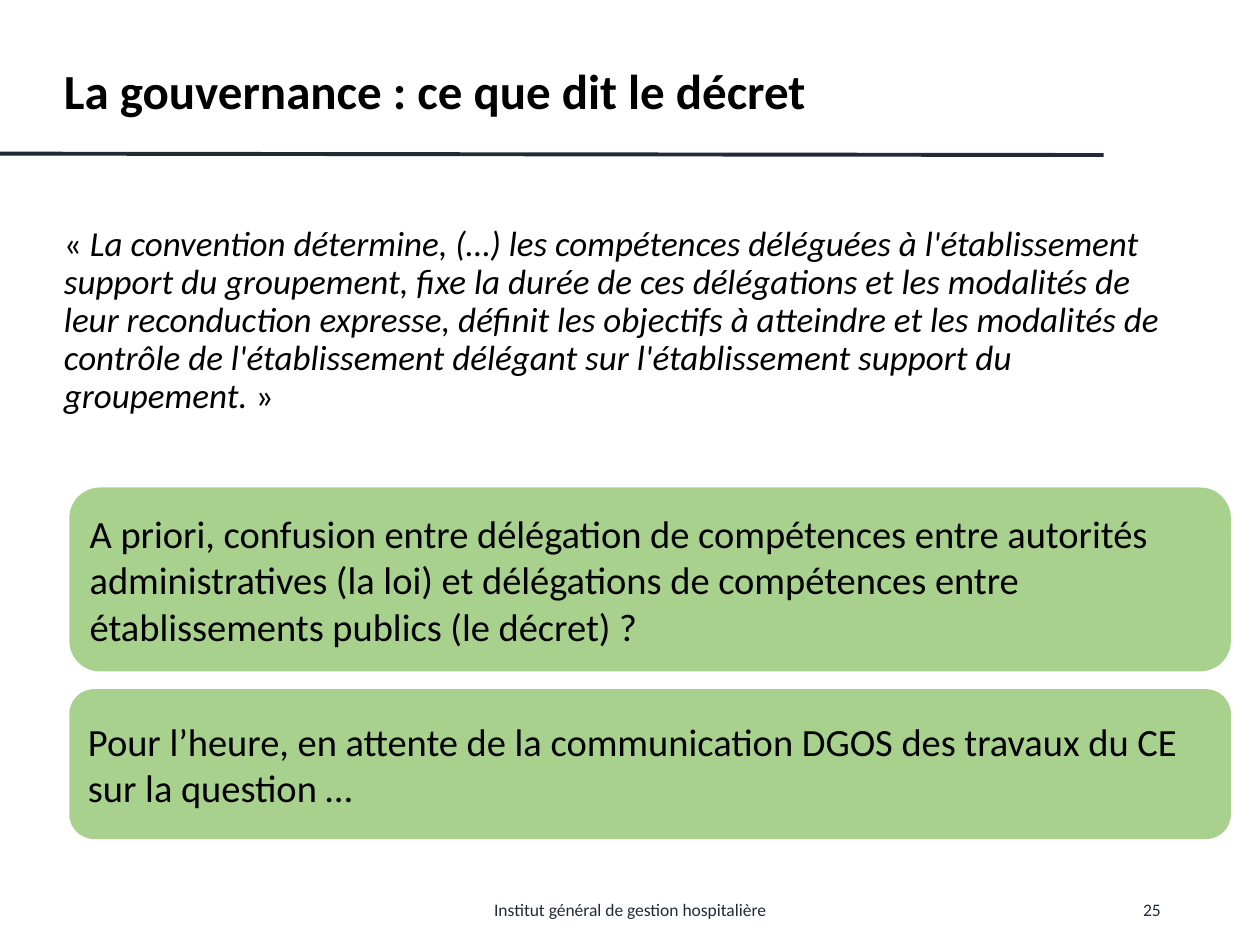
import pptx
import pptx.dml.color
import pptx.enum.shapes
import pptx.enum.text
import pptx.util
from lxml import etree

Pt = pptx.util.Pt
RGBColor = pptx.dml.color.RGBColor
ALIGN = pptx.enum.text.PP_ALIGN
ANCHOR = pptx.enum.text.MSO_ANCHOR

BLACK = RGBColor(0x00, 0x00, 0x00)
NAVY = RGBColor(0x22, 0x2A, 0x35)
GREEN = RGBColor(0xA9, 0xD1, 0x8E)

QUOTE = (
    "La convention détermine, (…) les compétences déléguées à l'établissement "
    "support du groupement, fixe la durée de ces délégations et les modalités de "
    "leur reconduction expresse, définit les objectifs à atteindre et les modalités "
    "de contrôle de l'établissement délégant sur l'établissement support du groupement."
)
REMARKS = [
    (278.6, 105.1,
     "A priori, confusion entre délégation de compétences entre autorités "
     "administratives (la loi) et délégations de compétences entre "
     "établissements publics (le décret) ?"),
    (393.8, 85.7,
     "Pour l’heure, en attente de la communication DGOS des travaux du CE "
     "sur la question …"),
]


class SlideBuilder:
    font_name = "Calibri"

    def __init__(self, slide):
        self.slide = slide

    def style(self, paragraph, size, color, bold=False, align=ALIGN.LEFT):
        paragraph.alignment = align
        font = paragraph.font
        font.name, font.size, font.bold = self.font_name, Pt(size), bold
        font.color.rgb = color

    def text(self, box, runs, size, color=BLACK, bold=False,
             align=ALIGN.LEFT, anchor=ANCHOR.MIDDLE):
        """Add a text box; runs are (text, italic) pairs. Return its paragraph."""
        frame = self.slide.shapes.add_textbox(*map(Pt, box)).text_frame
        frame.word_wrap = True
        frame.vertical_anchor = anchor
        paragraph = frame.paragraphs[0]
        self.style(paragraph, size, color, bold, align)
        for text, italic in runs:
            run = paragraph.add_run()
            run.text = text
            if italic:
                run.font.italic = True
        return paragraph

    def panel(self, box, text, size=22):
        shape = self.slide.shapes.add_shape(
            pptx.enum.shapes.MSO_SHAPE.ROUNDED_RECTANGLE, *map(Pt, box))
        shape.shadow.inherit = False
        shape.fill.solid()
        shape.fill.fore_color.rgb = GREEN
        shape.line.fill.background()
        frame = shape.text_frame
        frame.word_wrap = True
        frame.vertical_anchor = ANCHOR.MIDDLE
        frame.margin_left = Pt(6.5)
        frame.margin_right = Pt(5)
        frame.margin_top = frame.margin_bottom = Pt(3)
        paragraph = frame.paragraphs[0]
        paragraph.text = text
        self.style(paragraph, size, BLACK)

    def line(self, start, end, width, color):
        connector = self.slide.shapes.add_connector(
            pptx.enum.shapes.MSO_CONNECTOR.STRAIGHT, *map(Pt, start + end))
        connector.line.width = Pt(width)
        connector.line.color.rgb = color
        etree.SubElement(connector._element.spPr, pptx.oxml.ns.qn("a:effectLst"))


def main():
    presentation = pptx.Presentation()
    presentation.slide_width, presentation.slide_height = Pt(720), Pt(540)
    builder = SlideBuilder(
        presentation.slides.add_slide(presentation.slide_layouts[6]))

    builder.line((0, 87.8), (630.7, 88.6), 2.25, NAVY)
    builder.text((29.5, 19.4, 607, 63.4),
                 [("La gouvernance : ce que dit le décret", False)], 28, bold=True)
    quote = builder.text((29.5, 126, 640.8, 372.2),
                         [("«\u00a0", False), (QUOTE, True), ("\u00a0»", False)],
                         20, anchor=ANCHOR.TOP)
    quote.line_spacing = 0.9

    builder.text((238.3, 505.4, 243.4, 28.8),
                 [("Institut général de gestion hospitalière", False)],
                 10, NAVY, align=ALIGN.CENTER)
    builder.text((508.3, 505.4, 162, 28.8), [("25", False)],
                 10, NAVY, align=ALIGN.RIGHT)

    for top, height, remark in REMARKS:
        builder.panel((39.6, top, 663.8, height), remark)

    presentation.save("out.pptx")


if __name__ == "__main__":
    main()
